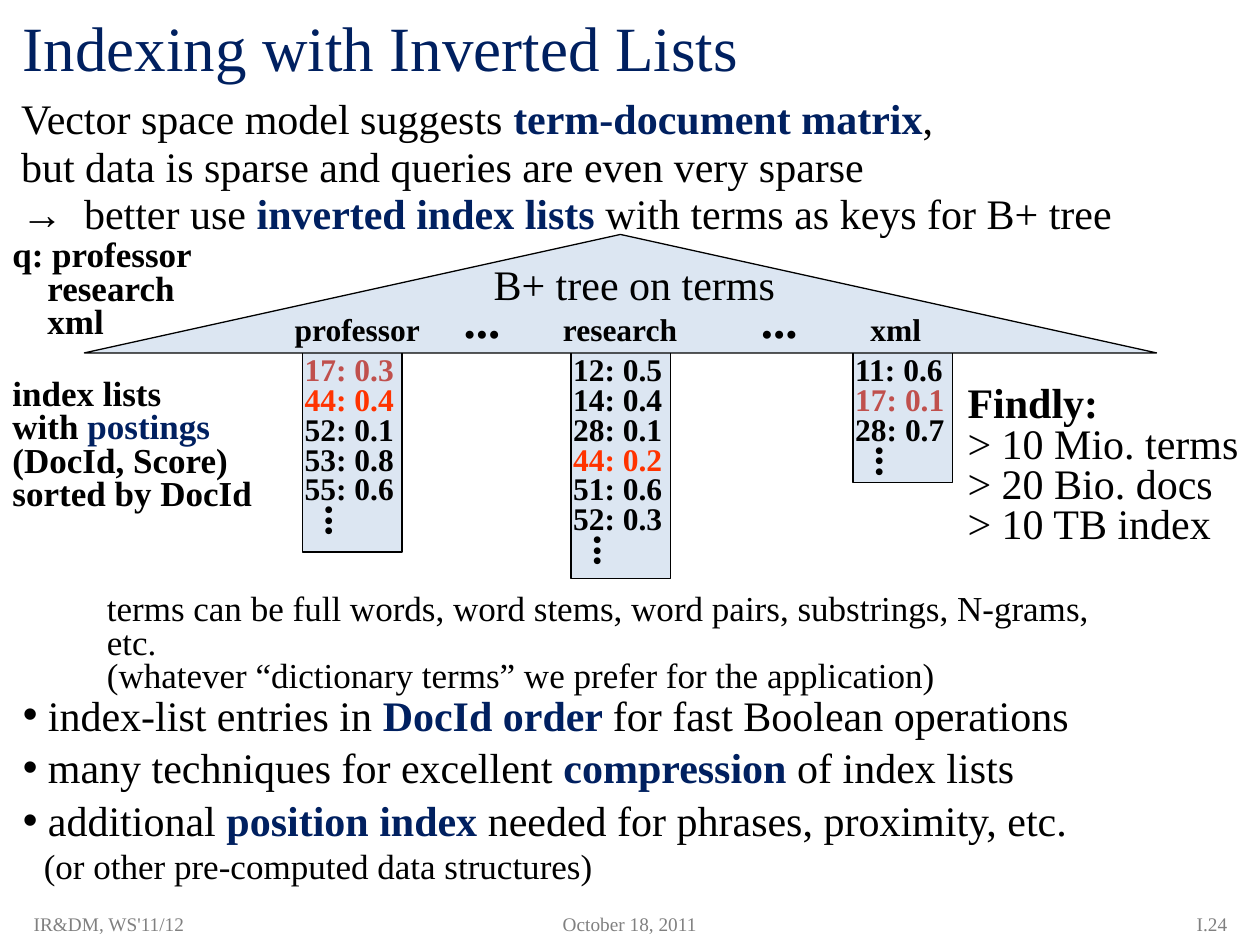
from dataclasses import dataclass

import pptx
import pptx.dml.color
import pptx.enum.shapes
import pptx.enum.text
import pptx.oxml
import pptx.oxml.ns
import pptx.util
from pptx.util import Pt

RGBColor = pptx.dml.color.RGBColor
Align = pptx.enum.text.PP_ALIGN
Anchor = pptx.enum.text.MSO_ANCHOR
Preset = pptx.enum.shapes.MSO_SHAPE

BLACK = RGBColor(0x00, 0x00, 0x00)
NAVY = RGBColor(0x00, 0x20, 0x60)
PALE_BLUE = RGBColor(0xDC, 0xE6, 0xF2)
BRICK = RGBColor(0xC0, 0x50, 0x4D)
ORANGE_RED = RGBColor(0xFF, 0x33, 0x00)
GRAY = RGBColor(0x80, 0x80, 0x80)
FONT = "Times New Roman"
LISTS_TOP = 196.6
POSTING_PITCH = 17


@dataclass(frozen=True)
class Box:
    left: float
    top: float
    width: float
    height: float


@dataclass(frozen=True)
class Span:
    text: str
    color: RGBColor | None = None
    bold: bool | None = None
    size: float | None = None


@dataclass(frozen=True)
class Line:
    spans: tuple[Span, ...]
    indent: float = 0
    bullet: bool = False
    spacing: float | None = None


@dataclass(frozen=True)
class Style:
    size: float
    color: RGBColor = BLACK
    bold: bool = False
    spacing: float = 1
    before: float = 0
    align: Align = Align.LEFT


@dataclass(frozen=True)
class IndexList:
    term: str
    term_left: float
    term_width: float
    left: float
    height: float
    postings: tuple[Span, ...]


def plain(*texts: str) -> list[Line]:
    return [Line((Span(text),)) for text in texts]


def key(text: str) -> Span:
    return Span(text, NAVY, True)


def place(shape, box: Box) -> None:
    shape.left, shape.top = Pt(box.left), Pt(box.top)
    shape.width, shape.height = Pt(box.width), Pt(box.height)


def set_bullet(paragraph, line: Line) -> None:
    properties = paragraph._p.get_or_add_pPr()
    properties.set("marL", str(Pt(line.indent)))
    properties.set("indent", str(Pt(-line.indent if line.bullet else 0)))
    namespace = pptx.oxml.ns.nsdecls("a")
    markup = f'<a:buChar {namespace} char="•"/>' if line.bullet else f"<a:buNone {namespace}/>"
    properties.append(pptx.oxml.parse_xml(markup))


def write(frame, lines: list[Line], style: Style) -> None:
    for index, line in enumerate(lines):
        paragraph = frame.add_paragraph() if index else frame.paragraphs[0]
        set_bullet(paragraph, line)
        paragraph.alignment = style.align
        paragraph.line_spacing = line.spacing or style.spacing
        paragraph.space_before = Pt(style.before if index else 0)
        paragraph.font.name = FONT
        paragraph.font.size = Pt(style.size)
        paragraph.font.bold = style.bold
        paragraph.font.color.rgb = style.color
        for span in line.spans:
            run = paragraph.add_run()
            run.text = span.text
            if span.color is not None:
                run.font.color.rgb = span.color
            if span.bold is not None:
                run.font.bold = span.bold
            if span.size is not None:
                run.font.size = Pt(span.size)


def fill_placeholder(shape, box: Box, lines: list[Line], style: Style, anchor: Anchor) -> None:
    place(shape, box)
    shape.text_frame.auto_size = pptx.enum.text.MSO_AUTO_SIZE.NONE
    shape.text_frame.vertical_anchor = anchor
    write(shape.text_frame, lines, style)


def add_text(slide, box: Box, lines: list[Line], style: Style, wrap: bool = False,
             anchor: Anchor = Anchor.TOP, rotation: float = 0) -> None:
    shape = slide.shapes.add_textbox(0, 0, 0, 0)
    place(shape, box)
    shape.rotation = rotation
    shape.text_frame.word_wrap = wrap
    shape.text_frame.vertical_anchor = anchor
    write(shape.text_frame, lines, style)


def add_outline(slide, preset: Preset, box: Box) -> None:
    shape = slide.shapes.add_shape(preset, 0, 0, 0, 0)
    place(shape, box)
    shape.shadow.inherit = False
    shape.fill.solid()
    shape.fill.fore_color.rgb = PALE_BLUE
    shape.line.color.rgb = BLACK
    shape.line.width = Pt(0.75)


def add_index_list(slide, index_list: IndexList) -> None:
    style = Style(18, bold=True)
    add_text(slide, Box(index_list.term_left, 173.5, index_list.term_width, 29),
             plain(index_list.term), style)
    for row, posting in enumerate(index_list.postings):
        top = LISTS_TOP + row * POSTING_PITCH
        add_text(slide, Box(index_list.left - 5.8, top, 65.5, 29), [Line((posting,))], style)
    add_text(slide, Box(index_list.left - 9, top + 15, 32.4, 36), plain("..."),
             Style(24, bold=True), rotation=270)


INDEX_LISTS = [
    IndexList("professor", 161.3, 86.4, 172.8, 118.8, (
        Span("17: 0.3", BRICK), Span("44: 0.4", ORANGE_RED), Span("52: 0.1"),
        Span("53: 0.8"), Span("55: 0.6"))),
    IndexList("research", 314.6, 80.6, 326.2, 133.9, (
        Span("12: 0.5"), Span("14: 0.4"), Span("28: 0.1"),
        Span("44: 0.2", ORANGE_RED), Span("51: 0.6"), Span("52: 0.3"))),
    IndexList("xml", 490.3, 43.2, 487.4, 79.2, (
        Span("11: 0.6"), Span("17: 0.1", BRICK), Span("28: 0.7"))),
]

INTRODUCTION = [
    Line((Span("Vector space model suggests "), key("term-document matrix"), Span(","))),
    Line((Span("but data is sparse and queries are even very sparse"),)),
    Line((Span("→  better use "), key("inverted index lists"),
          Span(" with terms as keys for B+ tree"))),
]

CONCLUSIONS = [
    Line((Span("index-list entries in "), key("DocId order "),
          Span("for fast Boolean operations")), 14.4, True),
    Line((Span("many techniques for excellent "), key("compression "),
          Span("of index lists")), 14.4, True),
    Line((Span("additional "), key("position index"),
          Span(" needed for phrases, proximity, etc.")), 14.4, True),
    Line((Span("(or other pre-computed data structures)", size=20),), 12, spacing=0.95),
]

FOOTERS = [
    (Box(12.2, 516, 216, 24), "IR&DM, WS'11/12", Align.LEFT),
    (Box(275.8, 516, 168, 24), "October 18, 2011", Align.CENTER),
    (Box(552.2, 516, 156.2, 24), "I.24", Align.RIGHT),
]


def main() -> None:
    presentation = pptx.Presentation()
    presentation.slide_width, presentation.slide_height = Pt(720), Pt(540)
    slide = presentation.slides.add_slide(presentation.slide_layouts[1])
    fill_placeholder(slide.shapes.title, Box(5.8, 5, 671.8, 43.2),
                     plain("Indexing with Inverted Lists"), Style(36, NAVY), Anchor.MIDDLE)
    fill_placeholder(slide.placeholders[1], Box(5.8, 390.2, 640, 121), CONCLUSIONS,
                     Style(24, before=1.3), Anchor.TOP)
    add_text(slide, Box(5, 52.6, 643, 85.7), INTRODUCTION, Style(24, spacing=0.9, before=1.2))

    for index_list in INDEX_LISTS:
        add_outline(slide, Preset.RECTANGLE,
                    Box(index_list.left, LISTS_TOP, 56.9, index_list.height))
    add_outline(slide, Preset.ISOSCELES_TRIANGLE, Box(48.2, 134, 612.7, 67.7))
    for index_list in INDEX_LISTS:
        add_index_list(slide, index_list)
    for left in (257.8, 427.7):
        add_text(slide, Box(left, 162, 35.3, 41), plain("..."), Style(28, bold=True))
    add_text(slide, Box(275, 149.8, 175, 30.2), plain("B+ tree on terms"),
             Style(24, spacing=0.8, align=Align.CENTER))

    label = Style(20, bold=True, spacing=0.8)
    query = plain("q: professor") + [Line((Span(term),), 20) for term in ("research", "xml")]
    add_text(slide, Box(0, 134, 117.4, 64.8), query, label)
    postings = Line((Span("with "), Span("postings", NAVY)))
    add_text(slide, Box(0, 213.1, 152.6, 85),
             [*plain("index lists"), postings, *plain("(DocId, Score)", "sorted by DocId")], label)
    add_text(slide, Box(545.8, 217.4, 170.6, 100),
             [Line((Span("Findly:", bold=True),)),
              *plain("> 10 Mio. terms", "> 20 Bio. docs", "> 10 TB index")],
             Style(24, spacing=0.8))
    add_text(slide, Box(54, 336.2, 607, 46),
             plain("terms can be full words, word stems, word pairs, substrings, N-grams, etc.",
                   "(whatever “dictionary terms” we prefer for the application)"),
             Style(20, spacing=0.8), wrap=True)
    for box, text, align in FOOTERS:
        add_text(slide, box, plain(text), Style(11, GRAY, align=align), True, Anchor.MIDDLE)
    presentation.save("out.pptx")


if __name__ == "__main__":
    main()
